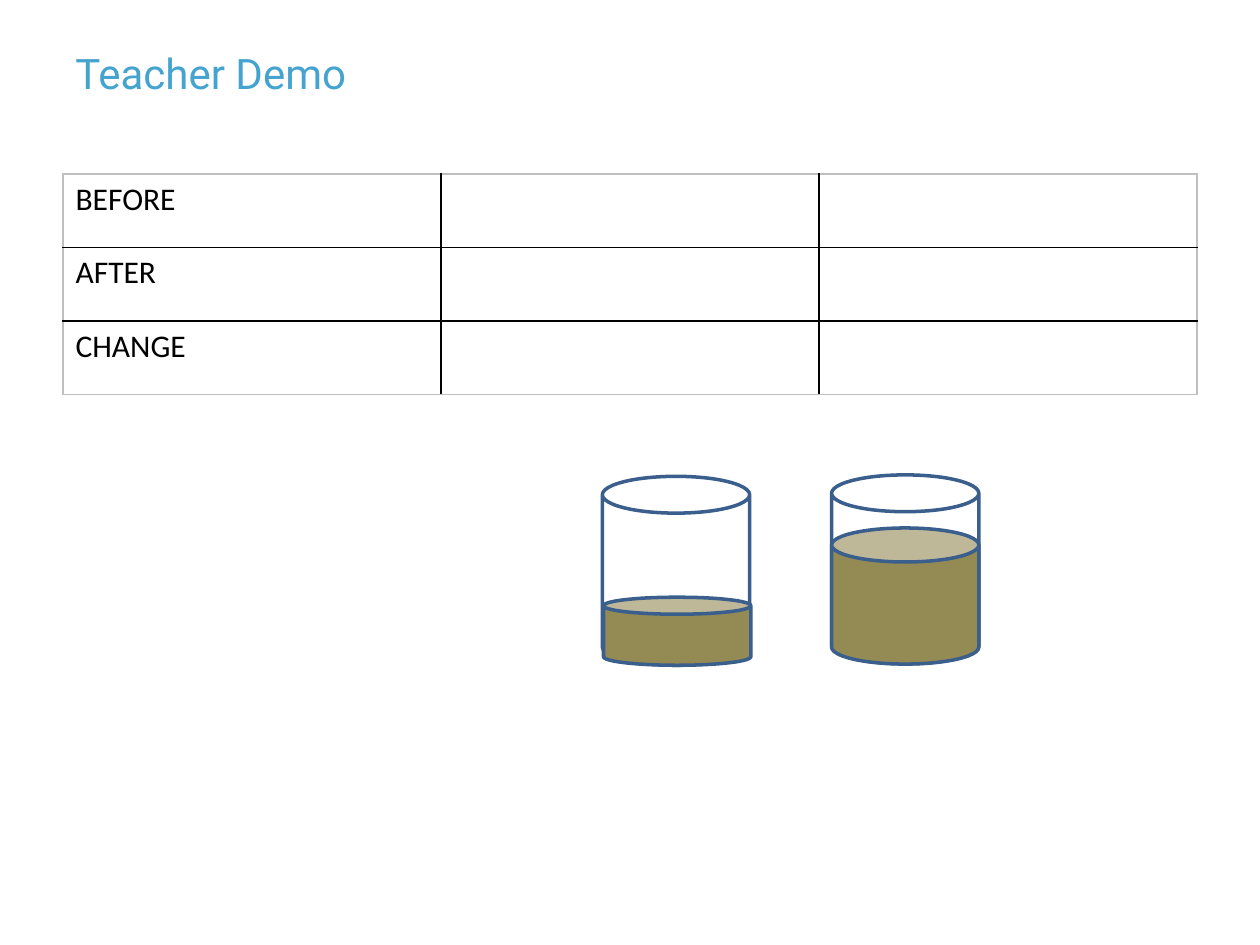
"""Build the Teacher Demo slide with its results table and two beakers."""
from dataclasses import dataclass

from lxml.etree import SubElement
from pptx import Presentation
from pptx.dml.color import RGBColor as RGB
from pptx.enum.shapes import MSO_SHAPE as Shape
from pptx.enum.text import MSO_ANCHOR as Anchor
from pptx.oxml.ns import qn
from pptx.util import Pt


@dataclass(frozen=True)
class Theme:
    title: str = "45A4CF"
    text: str = "000000"
    grid: str = "000000"
    frame: str = "BFBFBF"
    glass: str = "FFFFFF"
    liquid: str = "948A54"
    outline: str = "3A5F8C"
    title_font: str = "Roboto"
    body_font: str = "Calibri"
    title_size: float = 24
    body_size: float = 18
    grid_width: float = 1
    outline_width: float = 2


@dataclass(frozen=True)
class Can:
    left: float
    top: float
    height: float
    fill: str
    width: float = 84.2


THEME = Theme()
LABELS = ("BEFORE", "AFTER", "CHANGE")
COLUMNS = 3
COLUMN_WIDTH, ROW_HEIGHT = 216, 42
CANS = (
    Can(475.2, 271.4, 108, THEME.glass),
    Can(475.2, 301.7, 77.8, THEME.liquid),
    Can(344.2, 272.2, 108, THEME.glass),
    Can(344.9, 341.3, 38.9, THEME.liquid),
)


def write(tf, text: str, *, font: str, size: float, color: str) -> None:
    r = tf.paragraphs[0].add_run()
    r.text = text
    r.font.name = font
    r.font.size = Pt(size)
    r.font.color.rgb = RGB.from_string(color)


def add_title(s, text: str) -> None:
    sp = s.shapes.add_textbox(Pt(36), Pt(21.6), Pt(329), Pt(40.3))
    tf = sp.text_frame
    tf.word_wrap = True
    tf.vertical_anchor = Anchor.MIDDLE
    write(tf, text, font=THEME.title_font, size=THEME.title_size, color=THEME.title)


def set_borders(cell, colors: dict[str, str]) -> None:
    props = cell._tc.get_or_add_tcPr()
    for index, (side, color) in enumerate(colors.items()):
        line = SubElement(props, qn(f"a:{side}"), w=str(Pt(THEME.grid_width)))
        fill = SubElement(line, qn("a:solidFill"))
        SubElement(fill, qn("a:srgbClr"), val=color)
        props.insert(index, line)


def add_table(s, labels: tuple[str, ...]) -> None:
    rows = len(labels)
    frame = s.shapes.add_table(rows, COLUMNS, Pt(36), Pt(99.4),
                               Pt(COLUMNS * COLUMN_WIDTH), Pt(rows * ROW_HEIGHT))
    table = frame.table
    table.first_row = table.horz_banding = False
    for i, label in enumerate(labels):
        table.rows[i].height = Pt(ROW_HEIGHT)
        write(table.cell(i, 0).text_frame, label, font=THEME.body_font,
              size=THEME.body_size, color=THEME.text)
        for j in range(COLUMNS):
            cell = table.cell(i, j)
            cell.fill.background()
            outer = {"lnL": j == 0, "lnR": j == COLUMNS - 1,
                     "lnT": i == 0, "lnB": i == rows - 1}
            set_borders(cell, {side: THEME.frame if edge else THEME.grid
                               for side, edge in outer.items()})


def add_can(s, can: Can) -> None:
    sp = s.shapes.add_shape(Shape.CAN, Pt(can.left), Pt(can.top),
                            Pt(can.width), Pt(can.height))
    sp.shadow.inherit = False
    sp.fill.solid()
    sp.fill.fore_color.rgb = RGB.from_string(can.fill)
    sp.line.color.rgb = RGB.from_string(THEME.outline)
    sp.line.width = Pt(THEME.outline_width)


def main() -> None:
    prs = Presentation()
    prs.slide_width, prs.slide_height = Pt(720), Pt(540)
    s = prs.slides.add_slide(prs.slide_layouts[6])
    add_title(s, "Teacher Demo")
    add_table(s, LABELS)
    for can in CANS:
        add_can(s, can)
    prs.save("out.pptx")


if __name__ == "__main__":
    main()
